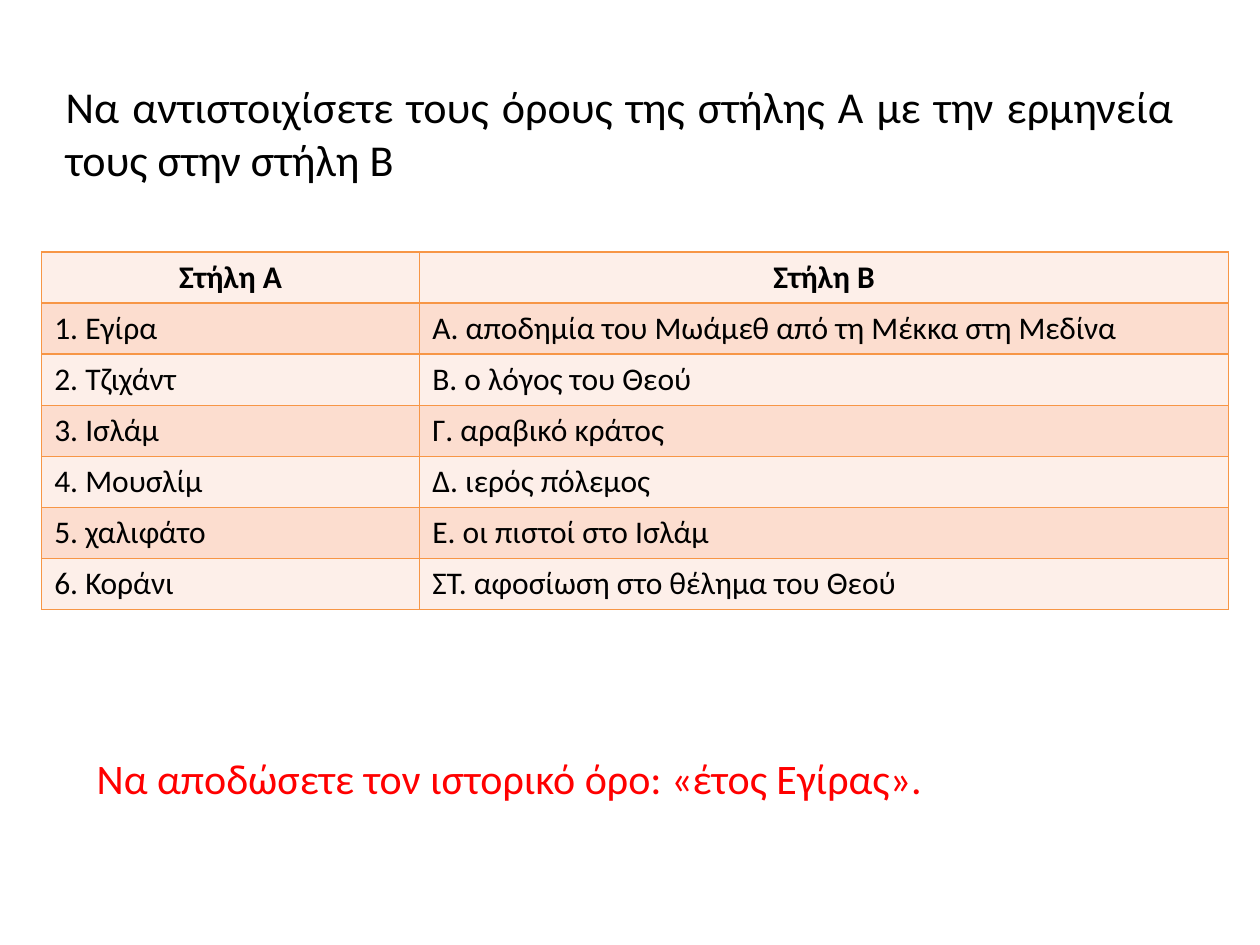
from lxml import etree
from pptx import Presentation
from pptx import util as u
from pptx.dml.color import RGBColor
from pptx.enum import text
from pptx.oxml import ns

BLACK = RGBColor(0x00, 0x00, 0x00)
RED = RGBColor(0xFF, 0x00, 0x00)
EDGE = RGBColor(0xF7, 0x96, 0x46)
BANDS = (RGBColor(0xFD, 0xEF, 0xE9), RGBColor(0xFC, 0xDD, 0xCF))
ALIGN = text.PP_ALIGN

TERMS = [
    ("Στήλη Α", "Στήλη Β"),
    ("1. Εγίρα", "Α. αποδημία του Μωάμεθ από τη Μέκκα στη Μεδίνα"),
    ("2. Τζιχάντ", "Β. ο λόγος του Θεού"),
    ("3. Ισλάμ", "Γ. αραβικό κράτος"),
    ("4. Μουσλίμ", "Δ. ιερός πόλεμος"),
    ("5. χαλιφάτο", "Ε. οι πιστοί στο Ισλάμ"),
    ("6. Κοράνι", "ΣΤ. αφοσίωση στο θέλημα του Θεού"),
]


class Sheet:
    face = "Calibri"

    def __init__(self, deck):
        self.slide = deck.slides.add_slide(deck.slide_layouts[5])

    def label(self, frame, words, size, color=BLACK, align=ALIGN.LEFT, bold=False):
        frame.word_wrap = True
        para = frame.paragraphs[0]
        para.alignment = align
        run = para.add_run()
        run.text = words
        font = run.font
        font.name, font.size, font.bold = self.face, u.Pt(size), bold
        font.color.rgb = color

    def title(self, words, left, top, width, height):
        box = self.slide.shapes.title
        box.left, box.top = u.Cm(left), u.Cm(top)
        box.width, box.height = u.Cm(width), u.Cm(height)
        frame = box.text_frame
        frame.auto_size = text.MSO_AUTO_SIZE.NONE
        frame.vertical_anchor = text.MSO_ANCHOR.MIDDLE
        self.label(frame, words, 25.2, align=ALIGN.JUSTIFY)

    def note(self, words, left, top, width, height):
        box = self.slide.shapes.add_textbox(*map(u.Cm, (left, top, width, height)))
        box.text_frame.auto_size = text.MSO_AUTO_SIZE.SHAPE_TO_FIT_TEXT
        self.label(box.text_frame, words, 24, RED)

    def border(self, cell):
        props = cell._tc.get_or_add_tcPr()
        for side in ("a:lnL", "a:lnR", "a:lnT", "a:lnB"):
            line = etree.SubElement(props, ns.qn(side), w=str(u.Pt(1)))
            fill = etree.SubElement(line, ns.qn("a:solidFill"))
            etree.SubElement(fill, ns.qn("a:srgbClr"), val=str(EDGE))

    def table(self, rows, left, top, widths, height):
        size = map(u.Cm, (left, top, sum(widths), height * len(rows)))
        grid = self.slide.shapes.add_table(len(rows), len(widths), *size).table
        for col, width in zip(grid.columns, widths):
            col.width = u.Cm(width)
        for r, row in enumerate(rows):
            grid.rows[r].height = u.Cm(height)
            head = r == 0
            for c, words in enumerate(row):
                cell = grid.cell(r, c)
                self.border(cell)
                cell.fill.solid()
                cell.fill.fore_color.rgb = BANDS[r % 2]
                self.label(cell.text_frame, words, 18, bold=head,
                           align=ALIGN.CENTER if head else ALIGN.LEFT)


def main():
    deck = Presentation()
    deck.slide_width, deck.slide_height = u.Cm(25.4), u.Cm(19.05)
    sheet = Sheet(deck)

    # Task
    sheet.title("Να αντιστοιχίσετε τους όρους της στήλης Α με την ερμηνεία "
                "τους στην στήλη Β", 1.07, 1.47, 22.86, 2.41)
    # Terms to match
    sheet.table(TERMS, 0.84, 5.08, (7.62, 16.31), 1.03)
    # Second question
    sheet.note("Να αποδώσετε τον ιστορικό όρο: «έτος Εγίρας».",
               1.7, 15.04, 22.23, 1.27)

    deck.save("out.pptx")


if __name__ == "__main__":
    main()
